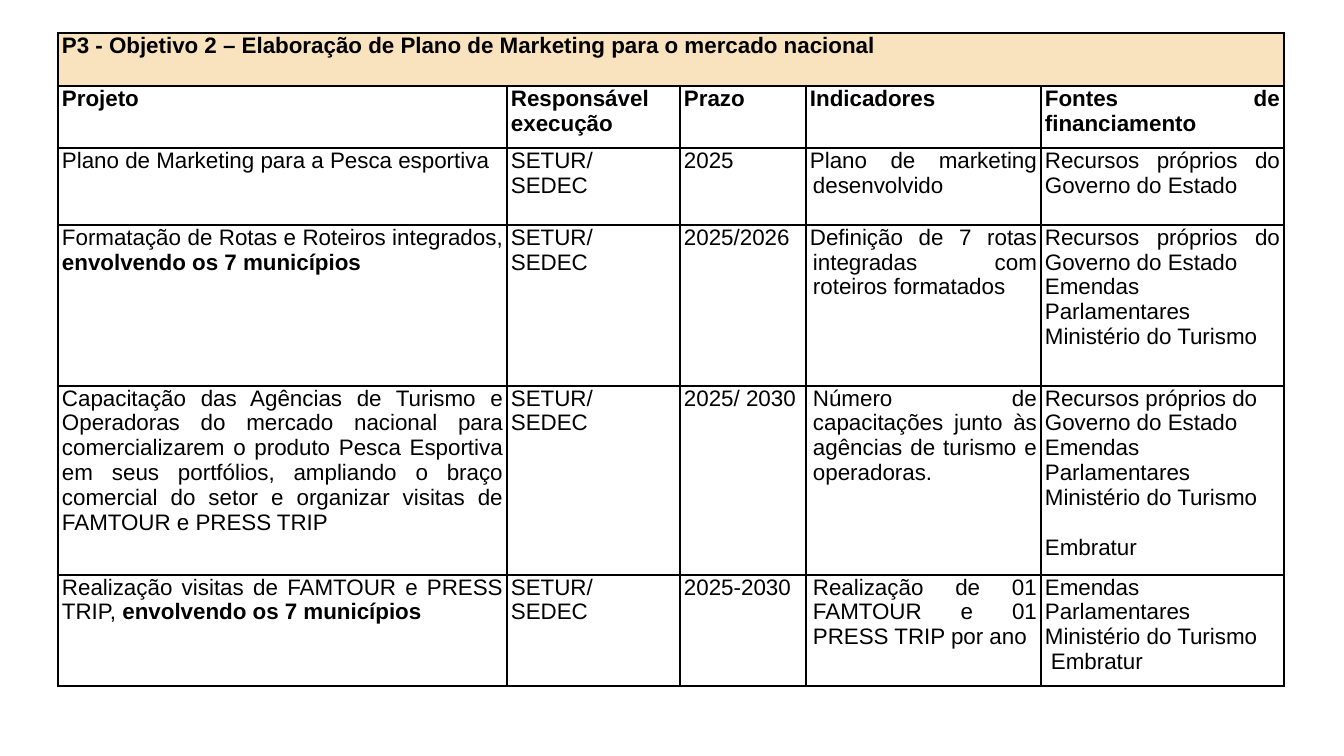
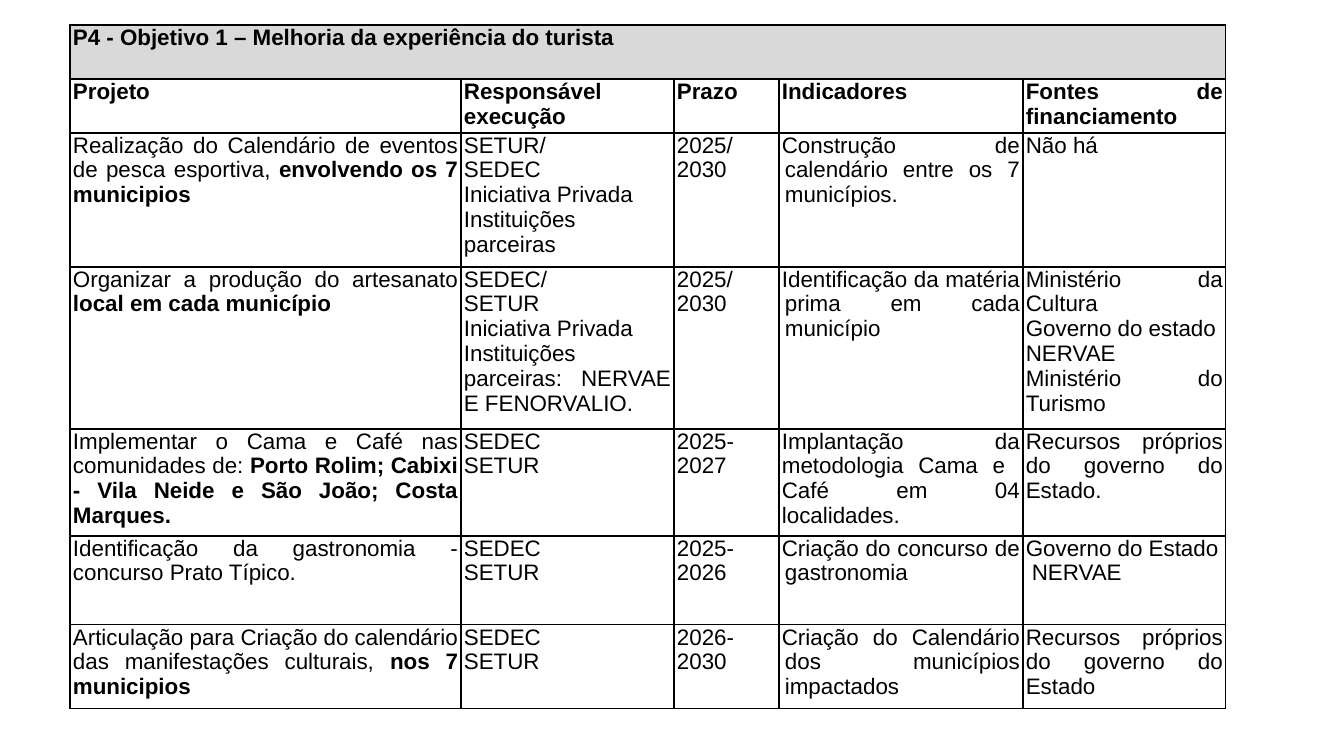
import dataclasses

import lxml.etree
import pptx
import pptx.dml.color
import pptx.enum.text
import pptx.oxml.ns
import pptx.util

PX = 914400 / 100.8  # EMU in one px
FONT, SIZE, INK = "Arial", 16, "000000"
LINE = 18  # points in one line of text
HEADS = ("Projeto", "Responsável execução", "Prazo", "Indicadores",
         "Fontes de financiamento")


@dataclasses.dataclass(frozen=True)
class Para:
    """A paragraph; *stars* enclose bold words."""
    text: str
    left: int = 0
    first: int = 0
    before: int = 0


Cell = str | tuple[str | Para, ...]


@dataclasses.dataclass(frozen=True)
class Plan:
    title: str
    fill: str
    left: int
    top: int
    pad: int
    cols: tuple[int, ...]
    rows: tuple[int, ...]
    body: tuple[tuple[Cell, ...], ...]


def px(count: int) -> pptx.util.Emu:
    return pptx.util.Emu(round(count * PX))


def rgb(code: str) -> pptx.dml.color.RGBColor:
    return pptx.dml.color.RGBColor.from_string(code)


def hang(text: str) -> Cell:
    return (Para(text, left=3, first=-3),)


def inset(text: str, left: int = 3) -> Cell:
    return (Para(text, left=left),)


# Shared cell texts
SETUR = ("SETUR/", "SEDEC")
SEDEC = ("SEDEC", "SETUR")
STATE = "Recursos próprios do Governo do Estado"
FUNDS = ("Emendas Parlamentares", "Ministério do Turismo")

MARKET = Plan(
    "P3 - Objetivo 2 – Elaboração de Plano de Marketing para o mercado nacional",
    "F9E3BE", 58, 33, 4,
    (449, 173, 126, 235, 243), (53, 62, 77, 161, 189, 111),
    (
        ("Plano de Marketing para a Pesca esportiva", SETUR, "2025",
         hang("Plano de marketing desenvolvido"), STATE),
        ("Formatação de Rotas e Roteiros integrados, "
         "*envolvendo os 7 municípios*", SETUR, "2025/2026",
         hang("Definição de 7 rotas integradas com roteiros formatados"),
         (STATE, *FUNDS)),
        ("Capacitação das Agências de Turismo e Operadoras do mercado nacional "
         "para comercializarem o produto Pesca Esportiva em seus portfólios, "
         "ampliando o braço comercial do setor e organizar visitas de FAMTOUR "
         "e PRESS TRIP", SETUR, "2025/ 2030",
         inset("Número de capacitações junto às agências de turismo e "
               "operadoras."),
         ("Recursos próprios do", "Governo do Estado", *FUNDS,
          Para("Embratur", before=LINE))),
        ("Realização visitas de FAMTOUR e PRESS TRIP, "
         "*envolvendo os 7 municípios*", SETUR, "2025-2030",
         inset("Realização de 01 FAMTOUR e 01 PRESS TRIP por ano"),
         (*FUNDS, *inset("Embratur", 6))),
    ),
)

VISIT = Plan(
    "P4 - Objetivo 1 – Melhoria da experiência do turista",
    "D9D9D9", 70, 25, 3,
    (391, 213, 105, 244, 203), (54, 54, 134, 162, 107, 89, 84),
    (
        ("Realização do Calendário de eventos de pesca esportiva, "
         "*envolvendo os 7 municipios*",
         (*SETUR, "Iniciativa Privada", "Instituições parceiras"),
         ("2025/", "2030"),
         hang("Construção de calendário entre os 7 municípios."), "Não há"),
        ("Organizar a produção do artesanato *local em cada município*",
         ("SEDEC/", "SETUR", "Iniciativa Privada",
          "Instituições parceiras: NERVAE E FENORVALIO."),
         ("2025/", "2030"),
         hang("Identificação da matéria prima em cada município"),
         ("Ministério da Cultura", "Governo do estado", "NERVAE",
          "Ministério do Turismo")),
        ("Implementar o Cama e Café nas comunidades de: *Porto Rolim; Cabixi "
         "- Vila Neide e São João; Costa Marques.*", SEDEC, "2025-2027",
         "Implantação da metodologia Cama e \vCafé em 04 localidades.",
         "Recursos próprios do governo do Estado."),
        ("Identificação da gastronomia - concurso Prato Típico.", SEDEC,
         "2025-2026", hang("Criação do concurso de gastronomia"),
         ("Governo do Estado", *inset("NERVAE", 6))),
        ("Articulação para Criação do calendário das manifestações culturais, "
         "*nos 7 municipios*", SEDEC, "2026-2030",
         hang("Criação do Calendário dos municípios impactados"),
         "Recursos próprios do governo do Estado"),
    ),
)


def edge(cell) -> None:
    """Draw a thin line on all four sides."""
    props = cell._tc.get_or_add_tcPr()
    qn = pptx.oxml.ns.qn
    for side in ("lnL", "lnR", "lnT", "lnB"):
        line = lxml.etree.SubElement(props, qn(f"a:{side}"),
                                     w=str(pptx.util.Pt(1)))
        solid = lxml.etree.SubElement(line, qn("a:solidFill"))
        lxml.etree.SubElement(solid, qn("a:srgbClr"), val=INK)


def write(par, item: Para, bold: bool) -> None:
    par.alignment = pptx.enum.text.PP_ALIGN.JUSTIFY
    par.space_before = pptx.util.Pt(item.before)
    font = par.font
    font.name, font.size, font.bold = FONT, pptx.util.Pt(SIZE), bold
    font.color.rgb = rgb(INK)
    props = par._p.get_or_add_pPr()
    props.set("marL", str(px(item.left)))
    props.set("indent", str(px(item.first)))
    if "*" not in item.text:
        par.text = item.text
        return
    for spot, part in enumerate(item.text.split("*")):
        if part:
            run = par.add_run()
            run.text = part
            run.font.bold = spot % 2 == 1


def fill_cell(cell, text: Cell, pad: int, bold: bool = False,
              fill: str = "") -> None:
    edge(cell)
    if fill:
        cell.fill.solid()
        cell.fill.fore_color.rgb = rgb(fill)
    else:
        cell.fill.background()
    cell.margin_left = cell.margin_right = px(pad)
    cell.margin_top = cell.margin_bottom = 0
    frame = cell.text_frame
    for spot, item in enumerate((text,) if isinstance(text, str) else text):
        par = frame.add_paragraph() if spot else frame.paragraphs[0]
        write(par, Para(item) if isinstance(item, str) else item, bold)


def draw(deck, plan: Plan) -> None:
    slide = deck.slides.add_slide(deck.slide_layouts[6])
    table = slide.shapes.add_table(
        len(plan.rows), len(plan.cols), px(plan.left), px(plan.top),
        px(sum(plan.cols)), px(sum(plan.rows))).table
    table.first_row = table.horz_banding = False
    for col, width in zip(table.columns, plan.cols):
        col.width = px(width)
    for row, height in zip(table.rows, plan.rows):
        row.height = px(height)

    # Title band
    band = [table.cell(0, at) for at in range(len(plan.cols))]
    band[0].merge(band[-1])
    fill_cell(band[0], plan.title, plan.pad, True, plan.fill)
    for cell in band[1:]:
        edge(cell)

    # Column heads and projects
    for down, texts in enumerate((HEADS, *plan.body), 1):
        for across, text in enumerate(texts):
            fill_cell(table.cell(down, across), text, plan.pad, down == 1)


def main() -> None:
    deck = pptx.Presentation()
    deck.slide_width, deck.slide_height = px(1344), px(756)
    for plan in (MARKET, VISIT):
        draw(deck, plan)
    deck.save("out.pptx")


if __name__ == "__main__":
    main()
